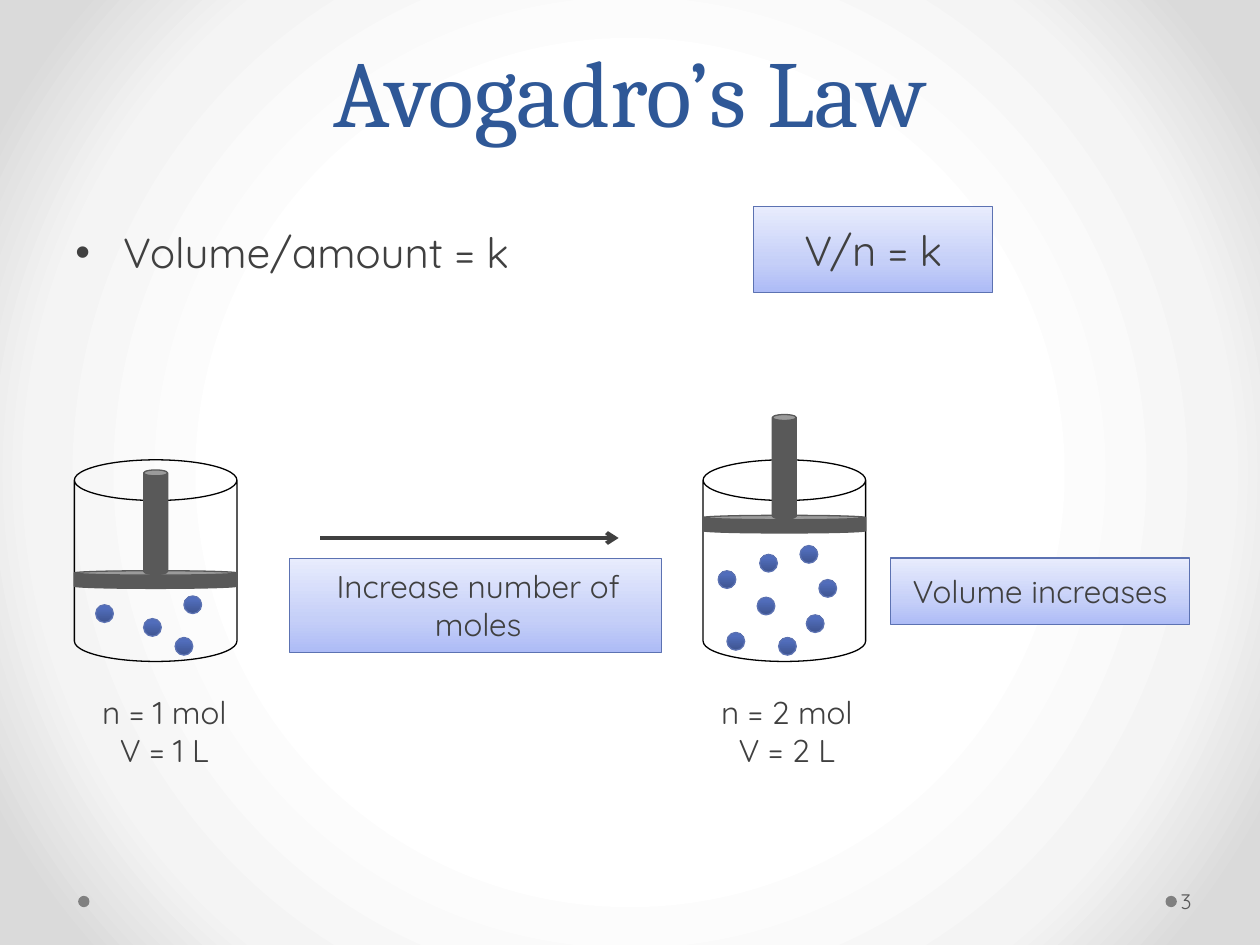
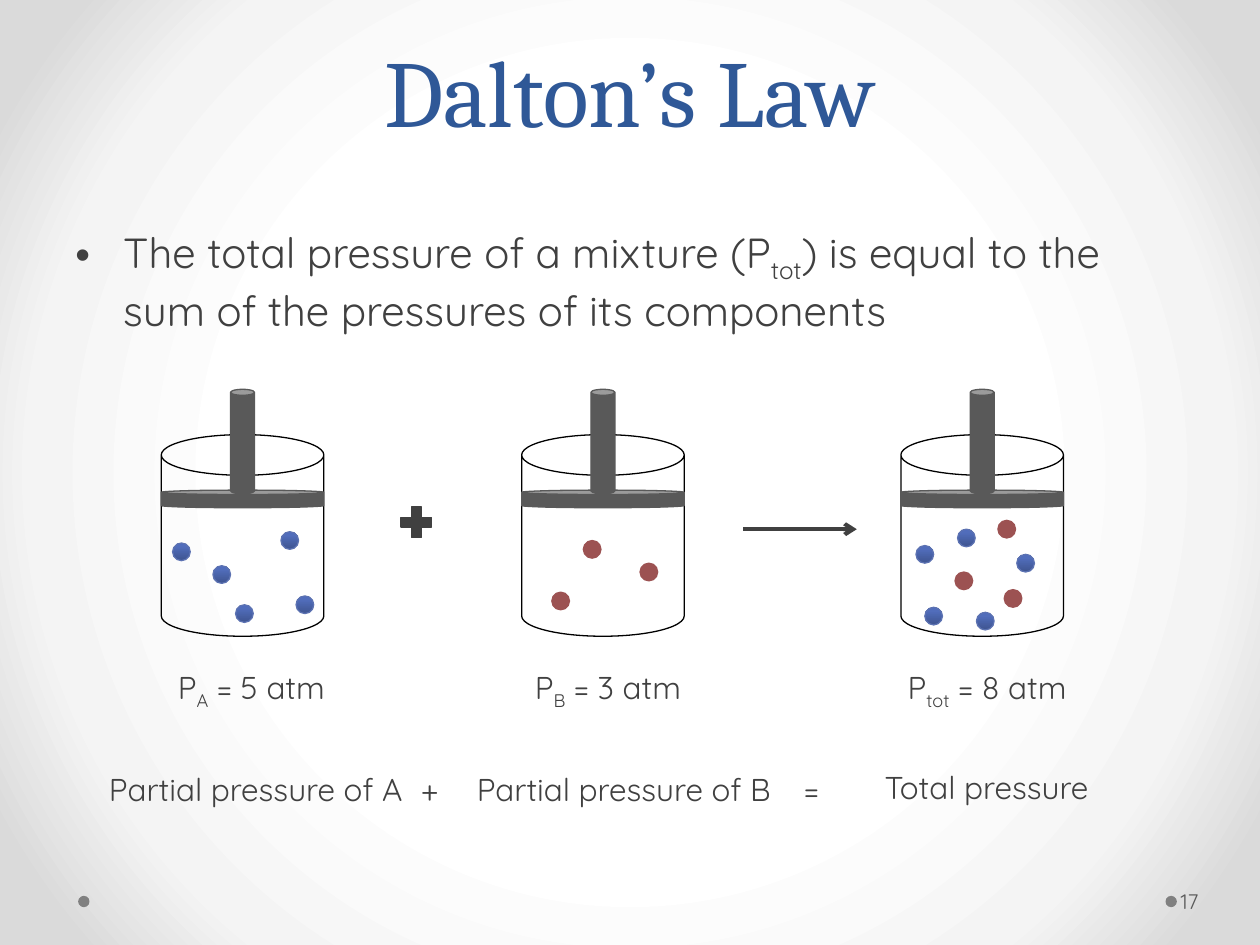
"""Build two gas law slides: Avogadro's Law and Dalton's Law."""
from lxml.etree import SubElement
from pptx import Presentation
from pptx.dml.color import RGBColor
from pptx.enum.shapes import MSO_CONNECTOR, MSO_SHAPE
from pptx.enum.text import MSO_ANCHOR, PP_ALIGN
from pptx.oxml import parse_xml
from pptx.oxml.ns import nsdecls, qn
from pptx.util import Inches, Pt

COLORS = {
    "title": "2F5897", "text": "404040", "number": "595959", "footer_dot": "808080",
    "outline": "000000", "piston": "595959", "blue_line": "5C72B2", "red": "9C5252",
}
LINEAR = '<a:lin ang="16200000" scaled="0"/>'
CIRCLE = '<a:path path="circle"><a:fillToRect l="50000" t="50000" r="50000" b="50000"/></a:path>'
GRADIENTS = {
    "backdrop": ([(50, "FFFFFF"), (76, "F4F4F4"), (92, "DADADA")], CIRCLE),
    "panel": ([(0, "ADBBF6"), (35, "C5CFF8"), (100, "E8ECFD")], LINEAR),
    "blue": ([(0, "3E5490"), (80, "516DBB"), (100, "4F6CBE")], LINEAR),
}
CAN_W, CAN_H = 1.29, 1.6
ROD_W, ROD_H = 0.19, 0.83
PLATE_H = DOT = 0.14
RAISED, LOWERED = 0.44, 0.88
ROD_RISE = 0.8
EIGHT_DOTS = [(0.12, 0.88), (0.45, 0.75), (0.92, 0.95), (0.19, 1.37),
              (0.6, 1.41), (0.43, 1.09), (0.82, 1.23), (0.77, 0.68)]


def add_shape(shapes, preset, box, fill=None, line=None):
    sp = shapes.add_shape(preset, *[Inches(v) for v in box])
    sp.shadow.inherit = False
    if fill in GRADIENTS:
        paint(sp.fill, sp._element.spPr, fill)
    elif fill:
        sp.fill.solid()
        sp.fill.fore_color.rgb = RGBColor.from_string(COLORS[fill])
    else:
        sp.fill.background()
    if line:
        sp.line.color.rgb = RGBColor.from_string(COLORS[line])
        sp.line.width = Pt(0.75)
    else:
        sp.line.fill.background()


def paint(fill, parent, name):
    stops, direction = GRADIENTS[name]
    gs = "".join(f'<a:gs pos="{pos * 1000}"><a:srgbClr val="{c}"/></a:gs>' for pos, c in stops)
    fill.solid()
    parent.replace(parent.find(qn("a:solidFill")), parse_xml(
        f'<a:gradFill {nsdecls("a")} rotWithShape="1"><a:gsLst>{gs}</a:gsLst>{direction}</a:gradFill>'))


LABEL = {"size": 18, "font": "Quicksand", "color": "text", "align": PP_ALIGN.CENTER}
FORMULA = {**LABEL, "size": 24}
BODY = {**FORMULA, "align": PP_ALIGN.LEFT, "bullet": True}
TITLE = {"size": 54, "font": "Cambria", "color": "title", "align": PP_ALIGN.CENTER,
         "spacing": Pt(58), "frame": {"vertical_anchor": MSO_ANCHOR.BOTTOM}}
NUMBER = {"size": 12, "font": "Quicksand", "color": "number", "align": PP_ALIGN.LEFT,
          "frame": {"vertical_anchor": MSO_ANCHOR.MIDDLE, "margin_left": Inches(0.03),
                    "margin_right": Inches(0.05)}}

SLIDES = [
    {
        "title": "Avogadro’s Law", "number": "3", "body": "Volume/amount = k",
        "cylinders": [
            (0.59, 3.65, LOWERED, [(0.17, 1.15), (0.55, 1.26), (0.8, 1.41), (0.87, 1.08)], ""),
            (5.58, 3.65, RAISED, EIGHT_DOTS, ""),
        ],
        "panels": [(5.98, 1.64, 1.9, 0.68), (2.3, 4.43, 2.95, 0.75), (7.07, 4.43, 2.37, 0.53)],
        "plus": [],
        "arrow": (2.54, 4.27, 4.91, 4.27),
        "texts": [
            ((5.98, 1.73, 1.9, 0.5), "V/n = k", FORMULA),
            ((2.32, 4.45, 2.95, 0.71), "Increase number of moles", LABEL),
            ((7.07, 4.49, 2.37, 0.4), "Volume increases", LABEL),
            ((0.55, 5.45, 1.51, 0.71), "n = 1 mol\nV = 1 L", LABEL),
            ((5.49, 5.45, 1.51, 0.71), "n = 2 mol\nV = 2 L", LABEL),
        ],
    },
    {
        "title": "Dalton’s Law", "number": "17",
        "body": "The total pressure of a mixture (P|tot|) is equal to the sum of "
                "the pressures of its components",
        "cylinders": [
            (1.28, 3.45, RAISED,
             [(0.09, 0.86), (0.41, 1.04), (0.59, 1.35), (0.95, 0.77), (1.07, 1.28)], ""),
            (4.14, 3.45, RAISED, [], [(0.24, 1.25), (0.49, 0.84), (0.94, 1.02)]),
            (7.15, 3.45, RAISED, EIGHT_DOTS[:5], EIGHT_DOTS[5:]),
        ],
        "panels": [],
        "plus": [(3.14, 3.98, 0.33, 0.33)],
        "arrow": (5.9, 4.2, 6.8, 4.2),
        "texts": [
            ((1.24, 5.25, 1.51, 0.4), "P|A| = 5 atm", LABEL),
            ((4.07, 5.25, 1.51, 0.4), "P|B| = 3 atm", LABEL),
            ((7.01, 5.25, 1.65, 0.4), "P|tot| = 8 atm", LABEL),
            ((0.62, 6.06, 2.82, 0.4), "Partial pressure of A", LABEL),
            ((3.21, 6.06, 0.4, 0.4), "+", LABEL),
            ((3.54, 6.06, 2.82, 0.4), "Partial pressure of B", LABEL),
            ((6.24, 6.06, 0.4, 0.4), "=", LABEL),
            ((6.44, 6.05, 2.78, 0.4), "Total pressure", LABEL),
        ],
    },
]

prs = Presentation()
prs.slide_width, prs.slide_height = Inches(10), Inches(7.5)
bg = prs.slide_master.background.fill
bg.solid()
paint(bg, prs.slide_master._element.cSld.find(qn("p:bg")).find(qn("p:bgPr")), "backdrop")

for data in SLIDES:
    s = prs.slides.add_slide(prs.slide_layouts[6])
    for x in (9.25, 0.62):
        add_shape(s.shapes, MSO_SHAPE.OVAL, (x, 7.11, 0.09, 0.09), "footer_dot")

    for x, y, drop, blue_dots, red_dots in data["cylinders"]:
        rod_x = x + (CAN_W - ROD_W) / 2
        add_shape(s.shapes, MSO_SHAPE.CAN, (x, y, CAN_W, CAN_H), None, "outline")
        add_shape(s.shapes, MSO_SHAPE.CAN, (x, y + drop, CAN_W, PLATE_H), "piston", "piston")
        add_shape(s.shapes, MSO_SHAPE.CAN, (rod_x, y + drop - ROD_RISE, ROD_W, ROD_H),
                  "piston", "piston")
        for dots, fill, line in ((blue_dots, "blue", "blue_line"), (red_dots, "red", "red")):
            for dx, dy in dots:
                add_shape(s.shapes, MSO_SHAPE.OVAL, (x + dx, y + dy, DOT, DOT), fill, line)

    for box in data["panels"]:
        add_shape(s.shapes, MSO_SHAPE.RECTANGLE, box, "panel", "blue_line")
    for box in data["plus"]:
        add_shape(s.shapes, MSO_SHAPE.MATH_PLUS, box, "text", "text")

    arrow = s.shapes.add_connector(MSO_CONNECTOR.STRAIGHT, *[Inches(v) for v in data["arrow"]])
    arrow.line.color.rgb = RGBColor.from_string(COLORS["text"])
    arrow.line.width = Pt(2.25)
    SubElement(arrow.line._get_or_add_ln(), qn("a:tailEnd"), type="arrow")
    SubElement(arrow._element.spPr, qn("a:effectLst"))

    texts = [((0.5, 0, 9, 1.21), data["title"], TITLE),
             ((0.5, 1.75, 9, 4.95), data["body"], BODY),
             *data["texts"],
             ((9.34, 6.95, 0.61, 0.4), data["number"], NUMBER)]
    for box, content, fmt in texts:
        tf = s.shapes.add_textbox(*[Inches(v) for v in box]).text_frame
        tf.word_wrap = True
        for name, value in fmt.get("frame", {}).items():
            setattr(tf, name, value)
        for i, para in enumerate(content.split("\n")):
            p = tf.add_paragraph() if i else tf.paragraphs[0]
            p.alignment = fmt["align"]
            p.line_spacing = fmt.get("spacing")
            if fmt.get("bullet"):
                pPr = p._p.get_or_add_pPr()
                pPr.set("marL", str(Inches(0.38)))
                pPr.set("indent", str(-Inches(0.38)))
                SubElement(pPr, qn("a:buFont"), typeface="Arial")
                SubElement(pPr, qn("a:buChar"), char="•")
            for j, part in enumerate(para.split("|")):
                r = p.add_run()
                r.text = part
                for name, value in {"size": Pt(fmt["size"]), "name": fmt["font"]}.items():
                    setattr(r.font, name, value)
                r.font.color.rgb = RGBColor.from_string(COLORS[fmt["color"]])
                if j % 2:
                    r.font._element.set("baseline", "-25000")

prs.save("out.pptx")
